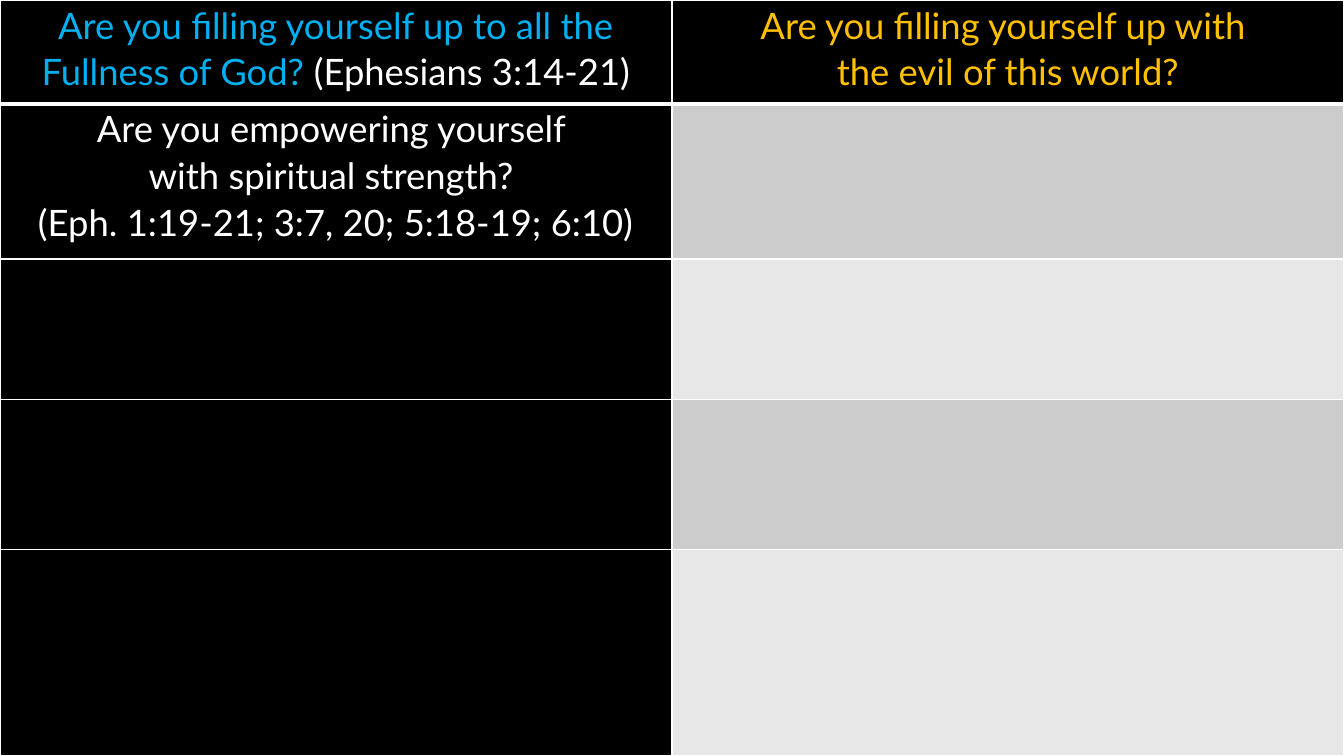
from dataclasses import dataclass

from lxml import etree
from pptx import Presentation
from pptx.dml.color import RGBColor
from pptx.enum.text import PP_ALIGN
from pptx.oxml.ns import qn
from pptx.util import Inches, Pt

CENTER = PP_ALIGN.CENTER
FONT = "Lato"
COLORS = {
    "black": "000000",
    "white": "FFFFFF",
    "blue": "00B0F0",
    "gold": "FFC000",
    "dark": "CCCCCC",
    "light": "E7E7E7",
}
WIDTH, HEIGHT = 13.33, 7.5
ROWS = [1.03, 1.54, 1.39, 1.49, 2.05]


@dataclass
class Part:
    text: str
    color: str


@dataclass
class Entry:
    row: int
    col: int
    lines: list[list[Part]]


ENTRIES = [
    Entry(0, 0, [[
        Part("Are you filling yourself up to all the Fullness of God? ", "blue"),
        Part("(Ephesians 3:14-21)", "white"),
    ]]),
    Entry(0, 1, [
        [Part("Are you filling yourself up with ", "gold")],
        [Part("the evil of this world?", "gold")],
    ]),
    Entry(1, 0, [
        [Part("Are you empowering yourself ", "white")],
        [Part("with spiritual strength? ", "white")],
        [Part("(Eph. 1:19-21; 3:7, 20; 5:18-19; 6:10)", "white")],
    ]),
]


def rgb(name: str) -> RGBColor:
    return RGBColor.from_string(COLORS[name])


def add_borders(cell, sides: dict[str, float]) -> None:
    """Draw white lines; sides come in the order L, R, T, B."""
    props = cell._tc.get_or_add_tcPr()
    for spot, (side, width) in enumerate(sides.items()):
        line = etree.Element(qn(f"a:ln{side}"), w=str(Pt(width)))
        fill = etree.SubElement(line, qn("a:solidFill"))
        etree.SubElement(fill, qn("a:srgbClr"), val=COLORS["white"])
        props.insert(spot, line)


def style_cell(cell, row: int, col: int) -> None:
    cell.margin_left = cell.margin_right = Inches(0.07)
    cell.margin_top = cell.margin_bottom = 0
    band = "dark" if row % 2 else "light"
    cell.fill.solid()
    cell.fill.fore_color.rgb = rgb("black" if row == 0 or col == 0 else band)
    top = 3 if row == 1 else 1
    base = 3 if row == 0 else 1
    add_borders(cell, {"L": 1, "R": 1, "T": top, "B": base})


def write_cell(cell, entry: Entry) -> None:
    frame = cell.text_frame
    for spot, line in enumerate(entry.lines):
        para = frame.add_paragraph() if spot else frame.paragraphs[0]
        para.alignment = CENTER
        para.line_spacing = 1.07
        for part in line:
            run = para.add_run()
            run.text = part.text
            run.font.name = FONT
            run.font.size = Pt(26)
            run.font.bold = False
            run.font.color.rgb = rgb(part.color)


def main() -> None:
    deck = Presentation()
    deck.slide_width, deck.slide_height = Inches(WIDTH), Inches(HEIGHT)
    slide = deck.slides.add_slide(deck.slide_layouts[6])
    slide.background.fill.solid()
    slide.background.fill.fore_color.rgb = rgb("black")

    # Full-slide table
    table = slide.shapes.add_table(
        len(ROWS), 2, 0, 0, Inches(WIDTH), Inches(HEIGHT)
    ).table
    for row, height in enumerate(ROWS):
        table.rows[row].height = Inches(height)
        for col in range(2):
            style_cell(table.cell(row, col), row, col)

    # Questions
    for entry in ENTRIES:
        write_cell(table.cell(entry.row, entry.col), entry)

    deck.save("out.pptx")


if __name__ == "__main__":
    main()
